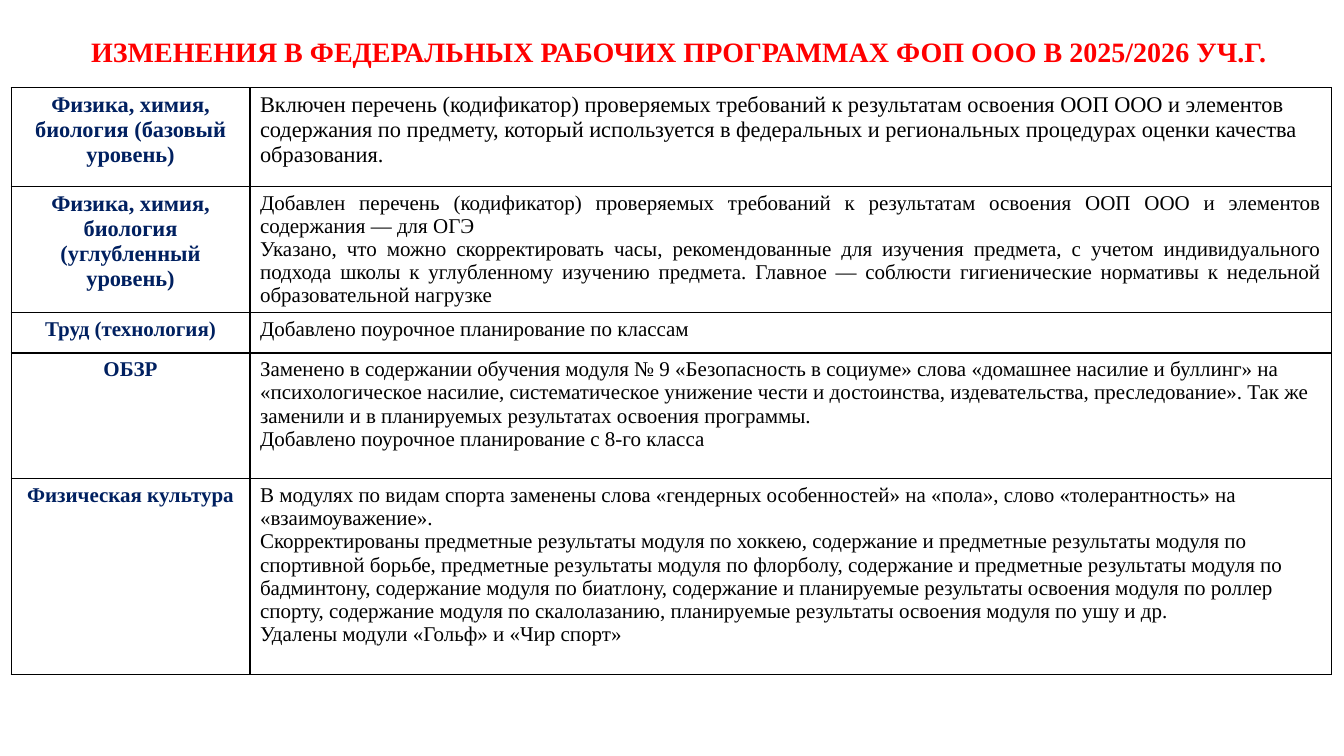
"""Builds the slide on changes in the federal curricula for 2025/2026."""
from lxml.etree import SubElement
from pptx import Presentation
from pptx.dml.color import RGBColor
from pptx.enum.text import MSO_ANCHOR, PP_ALIGN as Align
from pptx.oxml.ns import qn
from pptx.util import Cm, Pt

BLACK, NAVY, RED, WHITE = "000000", "002060", "FF0000", "FFFFFF"


def write(paragraph, text, size, color, bold, align):
    paragraph.alignment = align
    run = paragraph.add_run()
    run.text = text
    run.font.name = "Times New Roman"
    run.font.size = Pt(size)
    run.font.bold = bold
    run.font.color.rgb = RGBColor.from_string(color)


def frame(cell):
    properties = cell._tc.get_or_add_tcPr()
    for side in ("lnL", "lnR", "lnT", "lnB"):
        border = SubElement(properties, qn(f"a:{side}"), w=str(Pt(1)))
        fill = SubElement(border, qn("a:solidFill"))
        SubElement(fill, qn("a:srgbClr"), val=BLACK)
    cell.fill.solid()
    cell.fill.fore_color.rgb = RGBColor.from_string(WHITE)


subjects = [
    ("Физика, химия, биология (базовый уровень)", 16, 16, Align.LEFT, 2.49, [
        "Включен перечень (кодификатор) проверяемых требований к результатам освоения ООП ООО "
        "и элементов содержания по предмету, который используется в федеральных и региональных "
        "процедурах оценки качества образования.",
    ]),
    ("Физика, химия, биология (углубленный уровень)", 16, 15, Align.JUSTIFY, 3.17, [
        "Добавлен перечень (кодификатор) проверяемых требований к результатам освоения ООП ООО "
        "и элементов содержания — для ОГЭ",
        "Указано, что можно скорректировать часы, рекомендованные для изучения предмета, "
        "с учетом индивидуального подхода школы к углубленному изучению предмета. "
        "Главное — соблюсти гигиенические нормативы к недельной образовательной нагрузке",
    ]),
    ("Труд (технология)", 15, 15, Align.LEFT, 1.02, [
        "Добавлено поурочное планирование по классам",
    ]),
    ("ОБЗР", 15, 15, Align.LEFT, 3.17, [
        "Заменено в содержании обучения модуля № 9 «Безопасность в социуме» слова «домашнее "
        "насилие и буллинг» на «психологическое насилие, систематическое унижение чести "
        "и достоинства, издевательства, преследование». Так же заменили и в планируемых "
        "результатах освоения программы.",
        "Добавлено поурочное планирование с 8-го класса",
    ]),
    ("Физическая культура", 15, 15, Align.LEFT, 4.94, [
        "В модулях по видам спорта заменены слова «гендерных особенностей» на «пола», "
        "слово «толерантность» на «взаимоуважение».",
        "Скорректированы предметные результаты модуля по хоккею, содержание и предметные "
        "результаты модуля по спортивной борьбе, предметные результаты модуля по флорболу, "
        "содержание и предметные результаты модуля по бадминтону, содержание модуля "
        "по биатлону, содержание и планируемые результаты освоения модуля по роллер спорту, "
        "содержание модуля по скалолазанию, планируемые результаты освоения модуля по ушу и др.",
        "Удалены модули «Гольф» и «Чир спорт»",
    ]),
]

deck = Presentation()
deck.slide_width, deck.slide_height = Cm(33.87), Cm(19.05)
slide = deck.slides.add_slide(deck.slide_layouts[5])

heading = slide.shapes.title
heading.left, heading.top, heading.width, heading.height = Cm(0.74), Cm(0.48), Cm(32.74), Cm(1.73)
heading.text_frame.vertical_anchor = MSO_ANCHOR.MIDDLE
heading_line = heading.text_frame.paragraphs[0]
heading_line.line_spacing = 0.9
write(heading_line, "ИЗМЕНЕНИЯ В ФЕДЕРАЛЬНЫХ РАБОЧИХ ПРОГРАММАХ ФОП ООО В 2025/2026 УЧ.Г.",
      20, RED, True, Align.CENTER)

total_height = sum(subject[4] for subject in subjects)
changes = slide.shapes.add_table(len(subjects), 2, Cm(0.28), Cm(2.21),
                                 Cm(33.27), Cm(total_height)).table
changes.first_row = changes.horz_banding = False
changes.columns[0].width, changes.columns[1].width = Cm(6.02), Cm(27.25)

for row, (subject, subject_size, detail_size, align, height, details) in zip(changes.rows, subjects):
    row.height = Cm(height)
    subject_cell, detail_cell = row.cells
    frame(subject_cell)
    frame(detail_cell)
    write(subject_cell.text_frame.paragraphs[0], subject, subject_size, NAVY, True, Align.CENTER)
    for index, detail in enumerate(details):
        body = detail_cell.text_frame
        paragraph = body.add_paragraph() if index else body.paragraphs[0]
        write(paragraph, detail, detail_size, BLACK, False, align)

deck.save("out.pptx")
